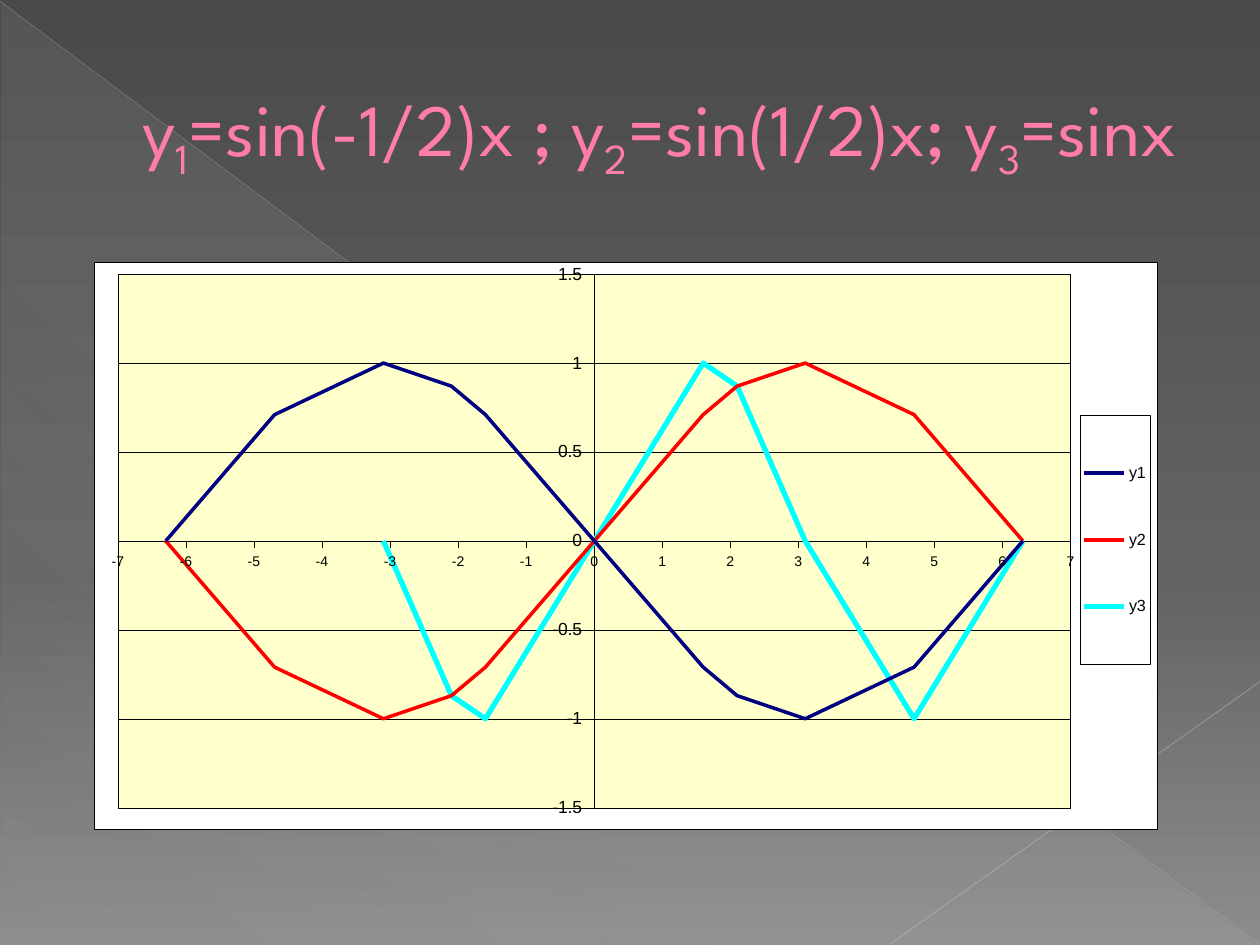
from lxml import etree
from pptx import Presentation
from pptx.chart.data import XyChartData
from pptx.dml.color import RGBColor
from pptx.enum import chart as ch, shapes, text
from pptx.oxml import parse_xml
from pptx.oxml.ns import nsdecls, qn
from pptx.util import Inches, Pt

# Content
TITLE = [("y", 0), ("1", -25), ("=sin(-1/2)x ; y", 0), ("2", -25),
         ("=sin(1/2)x; y", 0), ("3", -25), ("=sinx", 0)]
X = [-6.3, -4.7, -3.1, -2.1, -1.6, 0, 1.6, 2.1, 3.1, 4.7, 6.3]
Y2 = [0, -0.71, -1, -0.87, -0.71, 0, 0.71, 0.87, 1, 0.71, 0]
Y3 = [None, None, 0, -0.87, -1, 0, 1, 0.87, 0, -1, 0]
CURVES = [("y1", [-y for y in Y2], RGBColor(0, 0, 0x80), 2),
          ("y2", Y2, RGBColor(0xFF, 0, 0), 2),
          ("y3", Y3, RGBColor(0, 0xFF, 0xFF), 3)]

# Stops are position, colour, opacity (percent)
BACKDROP = [(0, "4A4A4A", 100), (60, "626262", 100), (100, "8C8C8C", 100)]
SHEEN = [(0, "D2D2D2", 10), (70, "D2D2D2", 8), (100, "D2D2D2", 1)]
# Start, end, colour, width, opacity
RAYS = [((0, 0.01), (9.99, 7.49), RGBColor(0xBF, 0xBF, 0xBF), 0.39, 35),
        ((10, 5.41), (7.07, 7.49), RGBColor(0xC6, 0xC6, 0xC6), 0.47, 45)]

PINK = RGBColor(0xFF, 0x7D, 0xA7)
BLACK = RGBColor(0, 0, 0)
WHITE = RGBColor(0xFF, 0xFF, 0xFF)
CREAM = RGBColor(0xFF, 0xFF, 0xCC)


def set_gradient(fill, parent, stops, angle):
    """Replace the parent's gradient by one with the given stops."""
    fill.gradient()
    gs = "".join(
        f'<a:gs pos="{pos * 1000}"><a:srgbClr val="{color}">'
        f'<a:alpha val="{alpha * 1000}"/></a:srgbClr></a:gs>'
        for pos, color, alpha in stops)
    grad = parse_xml(f'<a:gradFill {nsdecls("a")} rotWithShape="1"><a:gsLst>{gs}</a:gsLst>'
                     f'<a:lin ang="{angle * 60000}" scaled="0"/></a:gradFill>')
    old = next(parent.iter(qn("a:gradFill")))
    old.getparent().replace(old, grad)


def set_font(font, size):
    font.name, font.size, font.bold = "Arial", Pt(size), False
    font.color.rgb = BLACK


def set_line(line, color=BLACK, width=0.25):
    line.color.rgb, line.width = color, Pt(width)


def chart_box(fill, width=0.25):
    """Shape properties for chart parts that have no public format."""
    return parse_xml(
        f'<c:spPr {nsdecls("c", "a")}><a:solidFill><a:srgbClr val="{fill}"/></a:solidFill>'
        f'<a:ln w="{Pt(width)}"><a:solidFill><a:srgbClr val="{BLACK}"/></a:solidFill></a:ln></c:spPr>')


def place(element, before, x, y, w, h, inner=False):
    """Give a chart part a manual layout in fractions of the chart."""
    for old in element.findall(qn("c:layout")):
        element.remove(old)
    target = '<c:layoutTarget val="inner"/>' if inner else ""
    layout = parse_xml(
        f'<c:layout {nsdecls("c")}><c:manualLayout>{target}'
        f'<c:xMode val="edge"/><c:yMode val="edge"/><c:x val="{x}"/><c:y val="{y}"/>'
        f'<c:w val="{w}"/><c:h val="{h}"/></c:manualLayout></c:layout>')
    element.find(qn(before)).addprevious(layout)


prs = Presentation()
prs.slide_width, prs.slide_height = Inches(10), Inches(7.5)
s = prs.slides.add_slide(prs.slide_layouts[6])

# Background, large triangle and light rays
set_gradient(s.background.fill, s.element, BACKDROP, 90)
tri = s.shapes.add_shape(shapes.MSO_SHAPE.RIGHT_TRIANGLE,
                         Inches(0.01), Inches(0.02), Inches(9.98), Inches(7.48))
tri.shadow.inherit = False
tri.line.fill.background()
set_gradient(tri.fill, tri.element, SHEEN, 133)

for start, end, color, width, alpha in RAYS:
    ray = s.shapes.add_connector(shapes.MSO_CONNECTOR.STRAIGHT,
                                 *map(Inches, start + end))
    set_line(ray.line, color, width)
    sp_pr = ray.element.spPr
    clr = next(sp_pr.iter(qn("a:srgbClr")))
    etree.SubElement(clr, qn("a:alpha")).set("val", str(alpha * 1000))
    etree.SubElement(sp_pr, qn("a:effectLst"))

# Title
box = s.shapes.add_textbox(Inches(0.5), Inches(0.29), Inches(9), Inches(1.53))
tf = box.text_frame
tf.word_wrap = True
tf.vertical_anchor = text.MSO_ANCHOR.MIDDLE
p = tf.paragraphs[0]
p_pr = p._p.get_or_add_pPr()
p_pr.set("marL", str(Inches(0.53)))
p_pr.set("indent", "0")
for words, baseline in TITLE:
    r = p.add_run()
    r.text = words
    r.font.name, r.font.size = "League Spartan", Pt(42)
    r.font.color.rgb = PINK
    if baseline:
        r.font._element.set("baseline", str(baseline * 1000))

# Chart
data = XyChartData()
for name, ys, _, _ in CURVES:
    series = data.add_series(name)
    for x, y in zip(X, ys):
        series.add_data_point(x, y)
chart = s.shapes.add_chart(ch.XL_CHART_TYPE.XY_SCATTER_SMOOTH_NO_MARKERS,
                           Inches(0.75), Inches(2.08), Inches(8.44), Inches(4.5), data).chart
set_font(chart.font, 10)
chart.has_title = False
plot = chart.plots[0]
plot.vary_by_categories = False
for ser, (_, _, color, width) in zip(plot.series, CURVES):
    set_line(ser.format.line, color, width)
    ser.marker.style = ch.XL_MARKER_STYLE.NONE
    # Undefined values stay as gaps
    for pt in list(ser._element.iter(qn("c:pt"))):
        if pt.find(qn("c:v")).text == "None":
            pt.getparent().remove(pt)

# Axes
for axis, limit, step, size in ((chart.category_axis, 7, 1, 8),
                                (chart.value_axis, 1.5, 0.5, 10)):
    axis.minimum_scale, axis.maximum_scale, axis.major_unit = -limit, limit, step
    axis.major_tick_mark = ch.XL_TICK_MARK.OUTSIDE
    axis.minor_tick_mark = ch.XL_TICK_MARK.NONE
    axis.tick_label_position = ch.XL_TICK_LABEL_POSITION.NEXT_TO_AXIS
    axis.tick_labels.number_format = "General"
    axis.tick_labels.number_format_is_linked = False
    set_font(axis.tick_labels.font, size)
    set_line(axis.format.line)
chart.category_axis.has_major_gridlines = False
chart.value_axis.has_major_gridlines = True
set_line(chart.value_axis.major_gridlines.format.line)

# Legend, plot area and chart frame
chart.has_legend = True
legend = chart.legend
legend.position = ch.XL_LEGEND_POSITION.RIGHT
legend.include_in_layout = False
set_font(legend.font, 9.2)
place(legend._element, "c:overlay", 0.927, 0.27, 0.066, 0.44)
legend._element.find(qn("c:txPr")).addprevious(chart_box(WHITE))

space = chart._chartSpace
area = space.chart.plotArea
place(area, "c:scatterChart", 0.022, 0.021, 0.896, 0.942, inner=True)
area.append(chart_box(CREAM))
space.chart.addnext(chart_box(WHITE))

prs.save("out.pptx")
